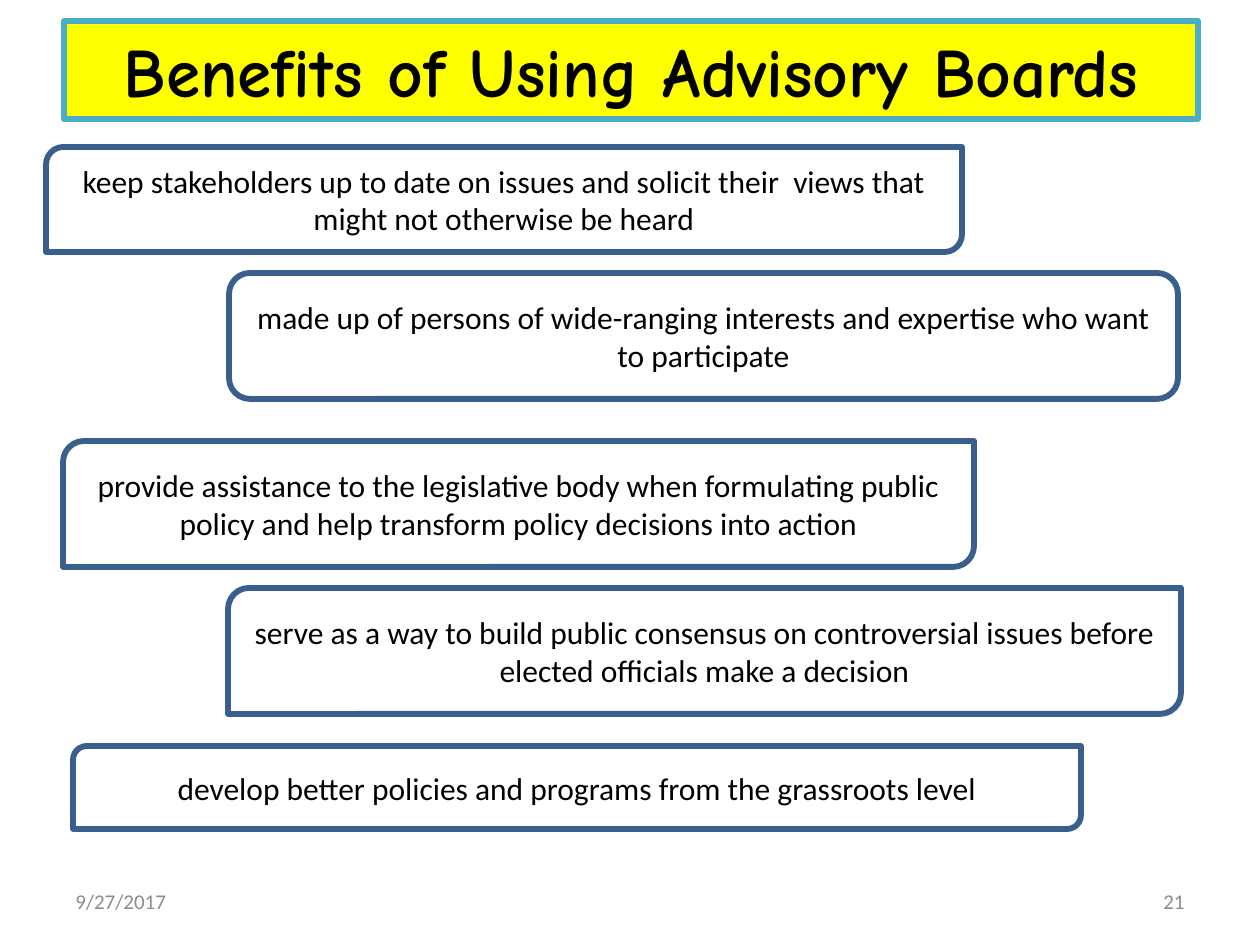
from dataclasses import dataclass

from pptx import Presentation
from pptx.dml.color import RGBColor
from pptx.enum.shapes import MSO_SHAPE
from pptx.enum.text import MSO_ANCHOR, MSO_AUTO_SIZE, PP_ALIGN
from pptx.util import Pt

PX = 914400 / 126
SLIDE_SIZE = (1260, 945)


@dataclass(frozen=True)
class Theme:
    ink: str = "000000"
    muted: str = "8C8C8C"
    paper: str = "FFFFFF"
    banner: str = "FFFF00"
    banner_edge: str = "4BACC6"
    benefit_edge: str = "3A5F8C"
    edge_width: float = 3.35
    title_font: str = "Comic Neue"
    body_font: str = "Calibri"
    title_size: float = 39.6
    body_size: float = 18
    footer_size: float = 12


THEME = Theme()
DIAGONAL = MSO_SHAPE.ROUND_2_DIAG_RECTANGLE
ROUNDED = MSO_SHAPE.ROUNDED_RECTANGLE

TITLE = ("Benefits of Using Advisory Boards", (64, 21, 1134, 98))
BENEFITS = [
    ("keep stakeholders up to date on issues and solicit their  views that might not otherwise be heard",
     DIAGONAL, (46, 147, 916, 105)),
    ("made up of persons of wide-ranging interests and expertise who want to participate",
     ROUNDED, (229, 273, 949, 126)),
    ("provide assistance to the legislative body when formulating public policy and help transform policy decisions into action",
     DIAGONAL, (63, 441, 911, 126)),
    ("serve as a way to build public consensus on controversial issues before elected officials make a decision",
     DIAGONAL, (228, 588, 953, 126)),
    ("develop better policies and programs from the grassroots level",
     DIAGONAL, (73, 746, 1008, 83)),
]
FOOTERS = [
    ("9/27/2017", PP_ALIGN.LEFT, (63, 876, 294, 50)),
    ("21", PP_ALIGN.RIGHT, (903, 876, 294, 50)),
]


def emu(lengths):
    return [round(length * PX) for length in lengths]


def place(shape, box):
    shape.left, shape.top, shape.width, shape.height = emu(box)


def paint(shape, fill, edge):
    shape.fill.solid()
    shape.fill.fore_color.rgb = RGBColor.from_string(fill)
    shape.line.color.rgb = RGBColor.from_string(edge)
    shape.line.width = Pt(THEME.edge_width)


def write(shape, text, size, color=THEME.ink, font=THEME.body_font,
          align=PP_ALIGN.CENTER, bold=False):
    frame = shape.text_frame
    frame.text = text
    frame.word_wrap = True
    frame.auto_size = MSO_AUTO_SIZE.NONE
    frame.vertical_anchor = MSO_ANCHOR.MIDDLE
    paragraph = frame.paragraphs[0]
    paragraph.alignment = align
    run_font = paragraph.runs[0].font
    run_font.name = font
    run_font.size = Pt(size)
    run_font.bold = bold
    run_font.color.rgb = RGBColor.from_string(color)


def main():
    deck = Presentation()
    deck.slide_width, deck.slide_height = emu(SLIDE_SIZE)
    slide = deck.slides.add_slide(deck.slide_layouts.get_by_name("Title Only"))

    heading, heading_box = TITLE
    banner = slide.shapes.title
    place(banner, heading_box)
    paint(banner, THEME.banner, THEME.banner_edge)
    write(banner, heading, THEME.title_size, font=THEME.title_font, bold=True)

    for benefit, outline, box in BENEFITS:
        card = slide.shapes.add_shape(outline, *emu(box))
        card.shadow.inherit = False
        paint(card, THEME.paper, THEME.benefit_edge)
        write(card, benefit, THEME.body_size)

    for label, align, box in FOOTERS:
        footer = slide.shapes.add_textbox(*emu(box))
        write(footer, label, THEME.footer_size, THEME.muted, align=align)

    deck.save("out.pptx")


if __name__ == "__main__":
    main()
